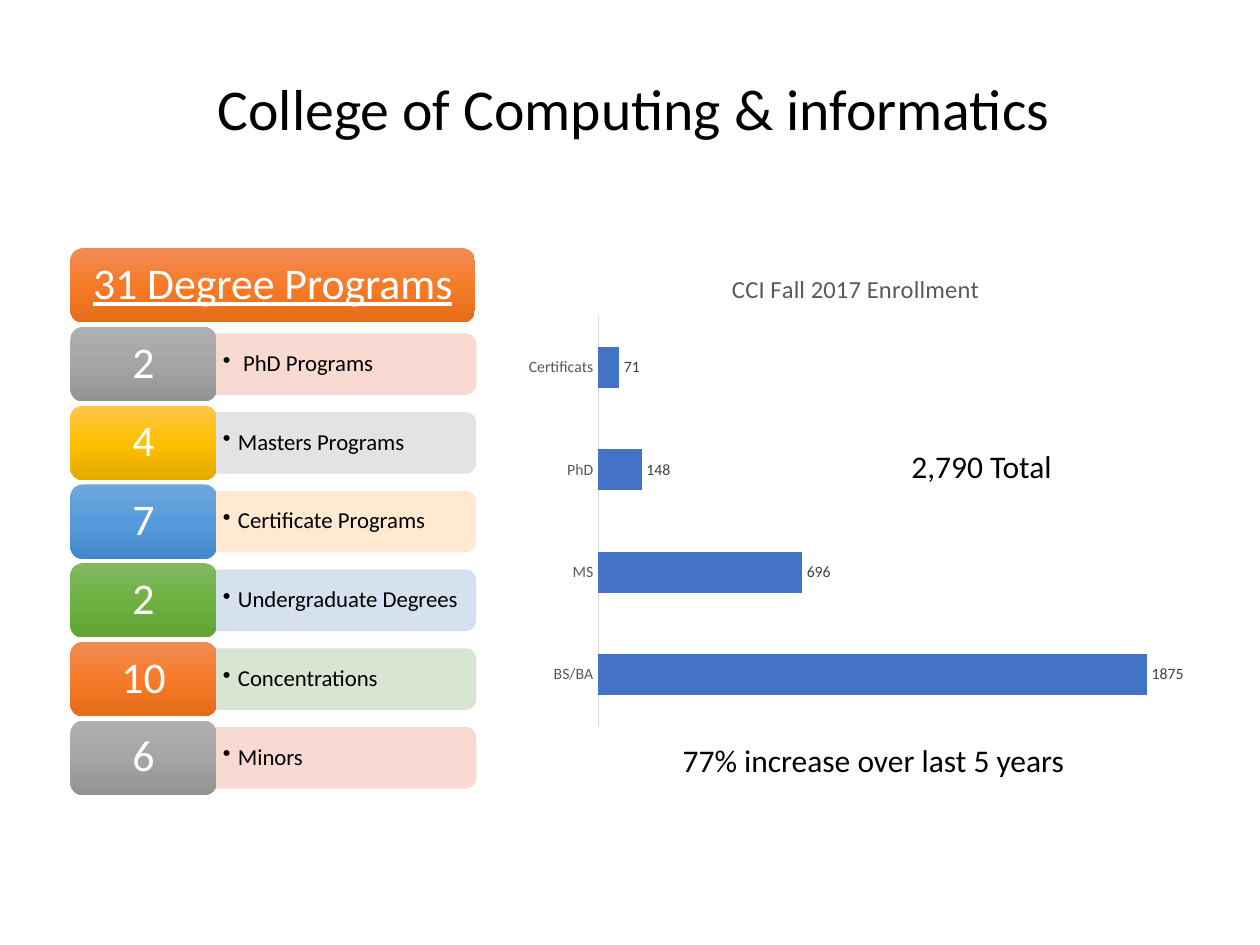
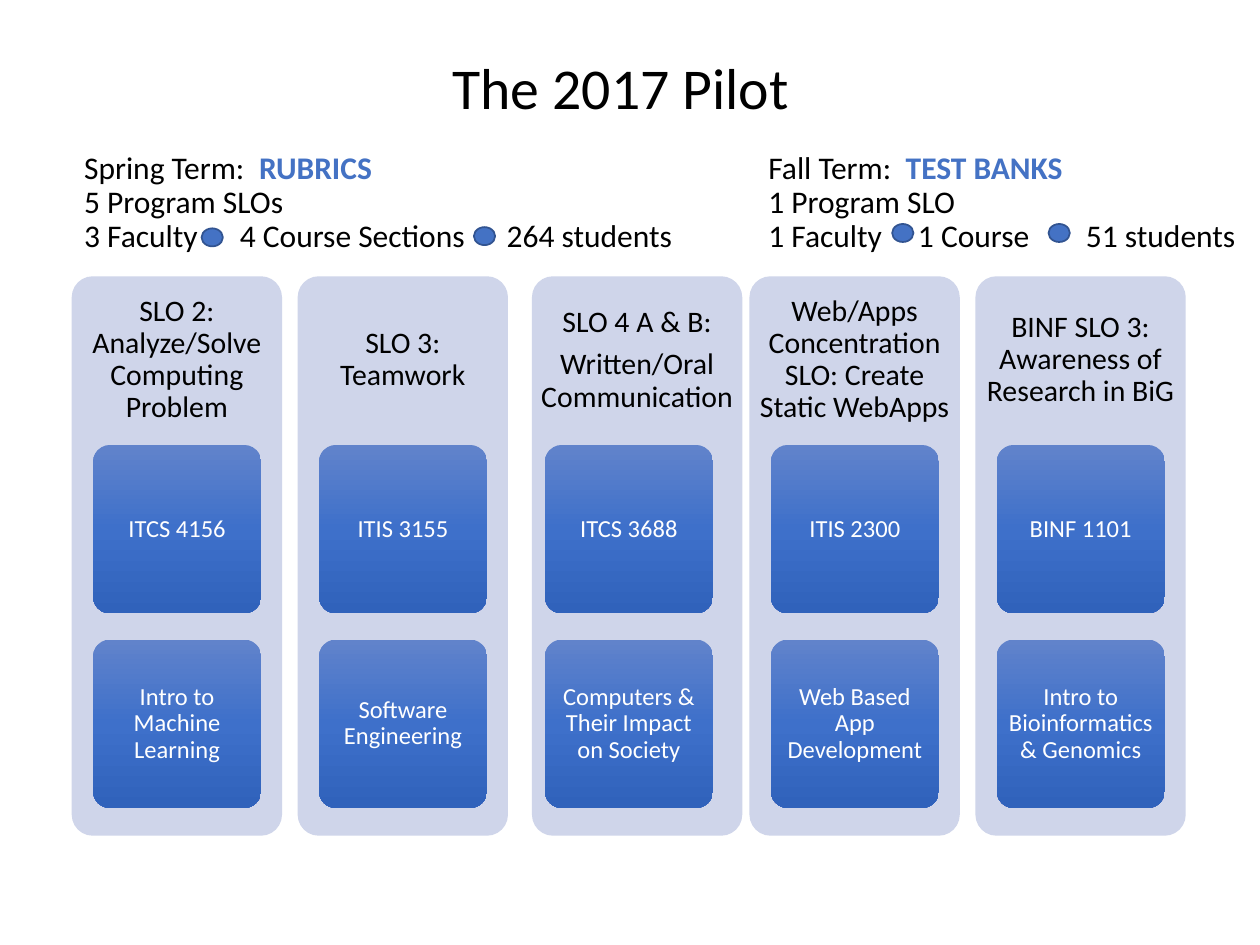
import pptx
import pptx.util
import pptx.oxml
import pptx.oxml.ns
import pptx.dml.color
import pptx.chart.data
import pptx.enum.chart
import pptx.enum.shapes
import pptx.enum.text

Pt = pptx.util.Pt
qn = pptx.oxml.ns.qn
SHAPE = pptx.enum.shapes.MSO_SHAPE
ALIGN = pptx.enum.text.PP_ALIGN
ANCHOR = pptx.enum.text.MSO_ANCHOR
NS = pptx.oxml.ns.nsdecls("a")

FONT = "Calibri"
COLORS = {
    "text": "000000", "white": "FFFFFF", "accent": "4472C4", "dot_line": "325491",
    "panel": "CFD5EA", "axis_text": "595959", "axis_line": "D9D9D9", "label": "404040",
    "pale_red": "F8D7CE", "pale_gray": "E1E1E1", "pale_orange": "FFE8CC",
    "pale_blue": "D2DEEF", "pale_green": "D5E3CF",
}
GRADIENTS = {  # top, middle, bottom
    "orange": ("F18C57", "F67B28", "E56C19"),
    "gray": ("AFAFAF", "A5A5A5", "939393"),
    "gold": ("FFC64B", "FFC000", "E3AB00"),
    "sky": ("71A6DB", "559BDB", "448ACA"),
    "green": ("81B861", "6FB242", "62A336"),
    "blue": ("6183CB", "3E70CA", "3062BB"),
}


def rgb(name):
    return pptx.dml.color.RGBColor.from_string(COLORS[name])


def style_font(font, size, color, bold=False, underline=False):
    font.name, font.size, font.bold = FONT, Pt(size), bold
    font.color.rgb = rgb(color)
    if underline:
        font.underline = True


def write(tf, text, size=18, color="text", align=ALIGN.LEFT, spacing=0.9,
          before=0, bullet_indent=0, tabs=(), underline=False):
    """Add one paragraph; text is a string or a list of (text, font overrides)."""
    first = tf.paragraphs[0]
    p = tf.add_paragraph() if first.runs else first
    pPr = p._p.get_or_add_pPr()
    if bullet_indent:
        pPr.set("marL", str(Pt(bullet_indent)))
        pPr.set("indent", str(-Pt(bullet_indent)))
        pPr.append(pptx.oxml.parse_xml(f'<a:buChar {NS} char="•"/>'))
    if tabs:
        stops = "".join(f'<a:tab pos="{Pt(t)}" algn="l"/>' for t in tabs)
        pPr.append(pptx.oxml.parse_xml(f"<a:tabLst {NS}>{stops}</a:tabLst>"))
    p.alignment, p.line_spacing = align, spacing
    if before:
        p.space_before = Pt(before)
    for part, changes in [(text, {})] if isinstance(text, str) else text:
        r = p.add_run()
        r.text = part
        style_font(r.font, **{"size": size, "color": color, "underline": underline, **changes})


def set_layout(el, index, **edges):
    """Place a chart part by fractions of the chart."""
    for old in el.findall(qn("c:layout")):
        el.remove(old)
    modes = "".join(f'<c:{k}Mode val="edge"/>' for k in "xy")
    target = '<c:layoutTarget val="inner"/>' if "w" in edges else ""
    values = "".join(f'<c:{k} val="{v}"/>' for k, v in edges.items())
    el.insert(index, pptx.oxml.parse_xml(
        f'<c:layout {pptx.oxml.ns.nsdecls("c")}><c:manualLayout>'
        f"{target}{modes}{values}</c:manualLayout></c:layout>"))


class Deck:
    def __init__(self):
        self.prs = pptx.Presentation()
        self.prs.slide_width, self.prs.slide_height = Pt(720), Pt(540)

    def new_slide(self, title, box):
        self.s = self.prs.slides.add_slide(self.prs.slide_layouts[6])
        write(self.text(box, anchor=ANCHOR.MIDDLE), title, size=33, align=ALIGN.CENTER)

    def frame(self, tf, anchor, inset):
        tf.word_wrap, tf.vertical_anchor = True, anchor
        tf.margin_left = tf.margin_right = Pt(inset[0])
        tf.margin_top = tf.margin_bottom = Pt(inset[1])
        return tf

    def text(self, box, anchor=ANCHOR.TOP, inset=(7.2, 3.6)):
        sp = self.s.shapes.add_textbox(*map(Pt, box))
        return self.frame(sp.text_frame, anchor, inset)

    def shape(self, kind, box, fill, line=None, line_width=0.5, adj=None):
        sp = self.s.shapes.add_shape(kind, *map(Pt, box))
        sp.shadow.inherit = False
        if adj is not None:
            sp.adjustments[0] = adj
        if fill in GRADIENTS:
            sp.fill.gradient()
            sp.fill.gradient_angle = 270
            stops = sp._element.spPr.find(qn("a:gradFill")).find(qn("a:gsLst"))
            for old in list(stops):
                stops.remove(old)
            for i, c in enumerate(GRADIENTS[fill]):
                stops.append(pptx.oxml.parse_xml(
                    f'<a:gs {NS} pos="{i * 50000}"><a:srgbClr val="{c}"/></a:gs>'))
        else:
            sp.fill.solid()
            sp.fill.fore_color.rgb = rgb(fill)
        if line:
            sp.line.color.rgb, sp.line.width = rgb(line), Pt(line_width)
        else:
            sp.line.fill.background()
        return sp

    def tile(self, box, fill, text, size, inset, adj=None, **fmt):
        sp = self.shape(SHAPE.ROUNDED_RECTANGLE, box, fill, adj=adj)
        tf = self.frame(sp.text_frame, ANCHOR.MIDDLE, inset)
        write(tf, text, size=size, color="white", align=ALIGN.CENTER, **fmt)

    def side_bar(self, x, mid_y, w, h, fill, text):
        # Turned a quarter so that the two rounded corners face right
        sp = self.shape(SHAPE.ROUND_2_SAME_RECTANGLE,
                        (x + (w - h) / 2, mid_y - w / 2, h, w), fill, line=fill)
        sp.rotation = 90
        for c in sp._element.spPr.iter(qn("a:srgbClr")):
            c.append(pptx.oxml.parse_xml(f'<a:alpha {NS} val="90000"/>'))
        # The box swaps its sides when turned: keep the same centre
        sp.left, sp.top = Pt(x + w / 2 - h / 2), Pt(mid_y - w / 2)
        tf = self.text((x, mid_y - 15.5, w - 2, 31), ANCHOR.MIDDLE, (3.6, 2))
        write(tf, text, size=13, bullet_indent=8.6)

    def bar_chart(self, box, title, values, top):
        data = pptx.chart.data.CategoryChartData()
        data.categories = list(values)
        data.add_series("Series 1", list(values.values()))
        kind = pptx.enum.chart.XL_CHART_TYPE.BAR_CLUSTERED
        chart = self.s.shapes.add_chart(kind, *map(Pt, box), data).chart
        style_font(chart.font, 10, "text")
        chart.has_legend = False
        chart.has_title = True
        tf = chart.chart_title.text_frame
        write(tf, title, size=14, color="axis_text", align=ALIGN.CENTER, spacing=1.0)
        set_layout(chart._chartSpace.xpath("c:chart/c:title")[0], 1, x=0.31, y=0.04)
        set_layout(chart._chartSpace.xpath("c:chart/c:plotArea")[0], 0,
                   x=0.12, y=0.14, w=0.86, h=0.84)
        # Axes
        cat, val = chart.category_axis, chart.value_axis
        cat.major_tick_mark = pptx.enum.chart.XL_TICK_MARK.NONE
        style_font(cat.tick_labels.font, 9, "axis_text")
        cat.format.line.color.rgb, cat.format.line.width = rgb("axis_line"), Pt(0.75)
        val.visible = val.has_major_gridlines = False
        val.minimum_scale, val.maximum_scale = 0, top
        # Bars and labels
        plot = chart.plots[0]
        plot.gap_width, plot.overlap, plot.vary_by_categories = 150, -25, False
        fill = plot.series[0].format.fill
        fill.solid()
        fill.fore_color.rgb = rgb("accent")
        plot.has_data_labels = True
        labels = plot.data_labels
        labels.show_value = True
        labels.position = pptx.enum.chart.XL_LABEL_POSITION.OUTSIDE_END
        style_font(labels.font, 9, "label")


def programs_slide(deck):
    deck.new_slide("College of Computing & informatics", (40.3, 17.3, 643.7, 93.6))

    # Degree programs: header, then one row per kind
    x, y, pitch, tile_w, tile_h = 40.3, 141.8, 45, 83.5, 42.5
    deck.tile((x, y, 231, tile_h), "orange", "31 Degree Programs", 25, (7.2, 3.6),
              underline=True)
    rows = [
        ("2", " PhD Programs", "gray", "pale_red"),
        ("4", "Masters Programs", "gold", "pale_gray"),
        ("7", "Certificate Programs", "sky", "pale_orange"),
        ("2", "Undergraduate Degrees", "green", "pale_blue"),
        ("10", "Concentrations", "orange", "pale_green"),
        ("6", "Minors", "gray", "pale_red"),
    ]
    for i, (count, name, tile_fill, bar_fill) in enumerate(rows, 1):
        row_y = y + i * pitch
        deck.side_bar(x + tile_w, row_y + tile_h / 2, 148, 34.6, bar_fill, name)
        deck.tile((x, row_y, tile_w, tile_h), tile_fill, count, 25, (7.2, 3.6))

    # Enrollment chart and its remarks
    enrollment = {"BS/BA": 1875, "MS": 696, "PhD": 148, "Certificats": 71}
    deck.bar_chart((295.2, 141.8, 388.8, 278.6), "CCI Fall 2017 Enrollment", enrollment, 2000)
    write(deck.text((383, 419.8, 239, 29)), "77% increase over last 5 years", spacing=1.0)
    write(deck.text((471.6, 252, 178.6, 29)), "2,790 Total", align=ALIGN.CENTER, spacing=1.0)


def pilot_slide(deck):
    deck.new_slide("The 2017 Pilot", (121, 5, 467.3, 93.6))

    # Terms
    terms = [
        (41, 391, "Spring Term:", "RUBRICS", 100, "5 Program SLOs",
         "3 Faculty\t4 Course Sections\t264 students", (89, 241.5)),
        (432, 312.5, "Fall Term:", "TEST BANKS", 78.5, "1 Program SLO",
         "1 Faculty\t1 Course\t51 students", (85.5, 181.5)),
    ]
    for x, w, term, method, tab, slos, counts, count_tabs in terms:
        tf = deck.text((x, 83.5, w, 89.3))
        write(tf, [(term + "\t", {}), (method, {"color": "accent", "bold": True})], tabs=(tab,))
        write(tf, slos)
        write(tf, counts, tabs=count_tabs)

    # Outcome columns: panel, heading, course code, course name
    columns = [
        (["SLO 2: Analyze/Solve Computing Problem"], "ITCS 4156", "Intro to Machine Learning"),
        (["SLO 3: Teamwork"], "ITIS 3155", "Software Engineering"),
        (["SLO 4 A & B:", "Written/Oral Communication"], "ITCS 3688",
         "Computers & Their Impact on Society"),
        (["Web/Apps Concentration SLO: Create Static WebApps"], "ITIS 2300",
         "Web Based App Development"),
        (["BINF SLO 3: Awareness of Research in BiG"], "BINF 1101",
         "Intro to Bioinformatics & Genomics"),
    ]
    for i, (heading, *cards) in enumerate(columns):
        x = 41 + 129.1 * i
        panel_x = x + (4.8 if i == 2 else 0)
        deck.shape(SHAPE.ROUNDED_RECTANGLE, (panel_x, 157.9, 120.2, 319.7), "panel", adj=0.1)
        tf = deck.text((panel_x, 157.9, 120.2, 95.8), ANCHOR.MIDDLE, (5, 5))
        for n, line in enumerate(heading):
            write(tf, line, size=17, align=ALIGN.CENTER, before=6 * n)
        for n, card in enumerate(cards):
            deck.tile((x + 12.2, 254.3 + 111.2 * n, 96, 96.2), "blue", card, 14,
                      (2.6, 2), adj=0.1)

    # Dots between the counts
    for x, y in [(115.2, 130.5), (270.8, 129.8), (509.8, 128), (599.2, 128)]:
        deck.shape(SHAPE.OVAL, (x, y, 12.2, 10.3), "accent", line="dot_line", line_width=1)


def main():
    deck = Deck()
    programs_slide(deck)
    pilot_slide(deck)
    deck.prs.save("out.pptx")


if __name__ == "__main__":
    main()
